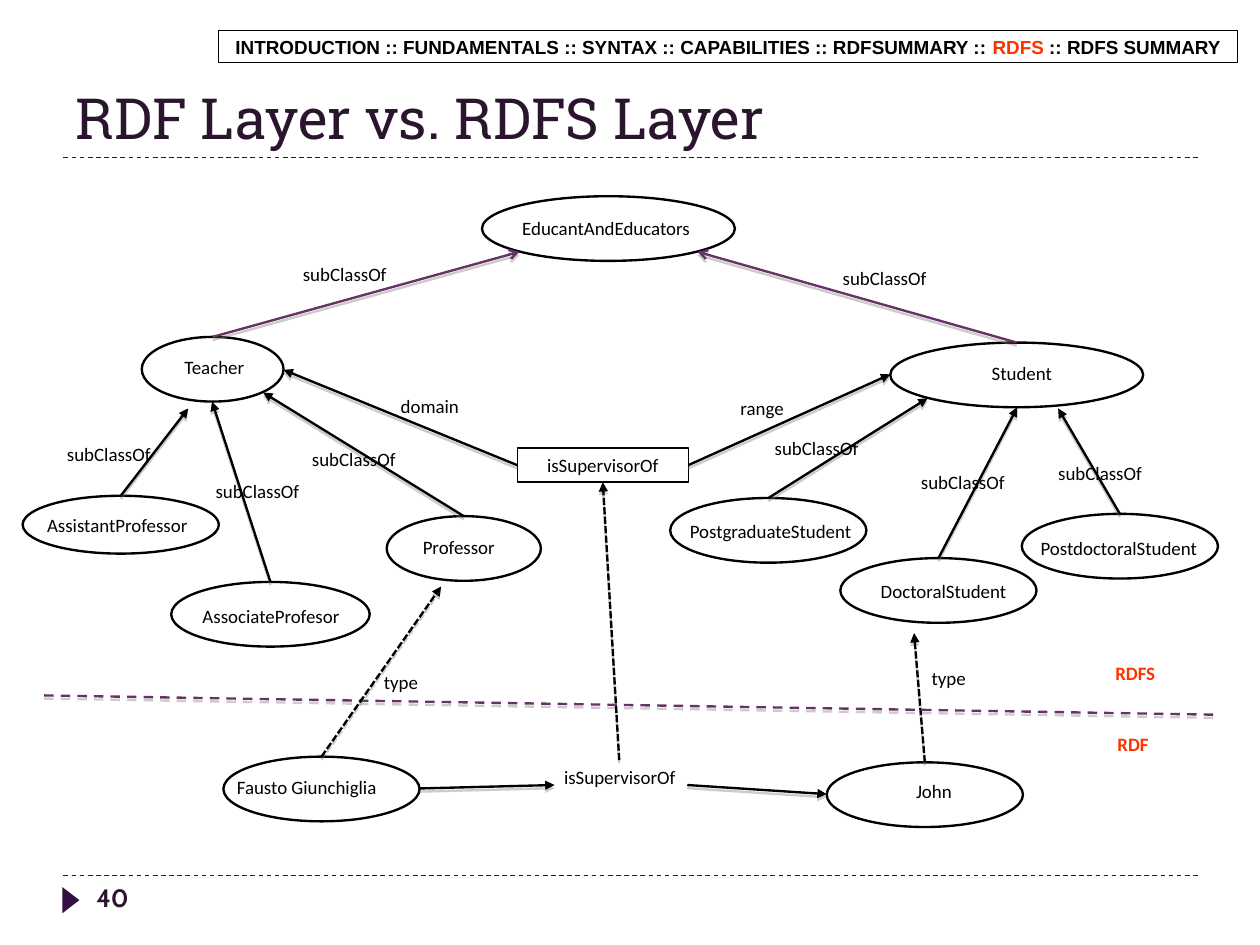
from dataclasses import dataclass
from typing import Any, NamedTuple, Optional, Union

from pptx import Presentation
from pptx import util as u
from pptx.dml.color import RGBColor
from pptx.enum import dml, shapes, text
from pptx.oxml import parse_xml
from pptx.oxml import ns

PX = 9144  # EMU in one px, 100 px to the inch
BLACK = RGBColor(0x00, 0x00, 0x00)
WHITE = RGBColor(0xFF, 0xFF, 0xFF)
RED = RGBColor(0xFF, 0x33, 0x00)
PURPLE = RGBColor(0x66, 0x33, 0x66)
DARK = RGBColor(0x33, 0x0F, 0x42)
TITLE = RGBColor(0x2B, 0x14, 0x2D)

DASH = dml.MSO_LINE.DASH
SHORT_DASH = dml.MSO_LINE.SQUARE_DOT
LEFT, CENTER = text.PP_ALIGN.LEFT, text.PP_ALIGN.CENTER
SHAPE = shapes.MSO_SHAPE
SHADOW = ('<a:outerShdw blurRad="0" dist="25400" dir="5400000" rotWithShape="0">'
          '<a:srgbClr val="808080"><a:alpha val="40000"/></a:srgbClr></a:outerShdw>')

BODY = {"size": u.Pt(12), "name": "Calibri", "bold": False}
STRONG = BODY | {"bold": True}
HEADER = STRONG | {"name": "Arial"}
GROW = {"auto_size": text.MSO_AUTO_SIZE.SHAPE_TO_FIT_TEXT, "word_wrap": True}
MASTER_INSETS = {"margin_left": 11 * PX, "margin_right": 11 * PX,
                 "margin_top": 6 * PX, "margin_bottom": 6 * PX}
HEADER_FRAME = {"word_wrap": False, "vertical_anchor": text.MSO_ANCHOR.MIDDLE,
                "margin_left": 8 * PX, "margin_right": 8 * PX,
                "margin_top": 4 * PX, "margin_bottom": 4 * PX}


class Box(NamedTuple):
    x: int
    y: int
    w: int
    h: int = 30


class Point(NamedTuple):
    x: int
    y: int


class Site(NamedTuple):
    """A connection site of a named node: 0 top, 1 left, 2 bottom, 3 right."""
    node: str
    index: int


class Run(NamedTuple):
    words: str
    color: RGBColor = BLACK


@dataclass(frozen=True)
class Node:
    name: str
    outline: Box
    label: Box
    align: Any = CENTER


@dataclass(frozen=True)
class Label:
    run: Run
    box: Box
    font: dict


@dataclass(frozen=True)
class Link:
    start: Union[Point, Site]
    end: Union[Point, Site]
    color: RGBColor = BLACK
    head: Optional[str] = "triangle"
    dash: Any = None
    width: float = 1.5
    shadow: bool = True


PROPERTY = "isSupervisorOf"
PROPERTY_BOX = Box(456, 395, 151)
NODES = [
    Node("EducantAndEducators", Box(425, 173, 223, 57), Box(438, 186, 193)),
    Node("Teacher", Box(125, 297, 125, 57), Box(144, 309, 90)),
    Node("Student", Box(785, 302, 223, 57), Box(815, 314, 172)),
    Node("AssistantProfessor", Box(20, 437, 173, 51), Box(20, 448, 167)),
    Node("AssociateProfesor", Box(151, 513, 175, 57), Box(157, 528, 164)),
    Node("PostgraduateStudent", Box(591, 439, 173, 57), Box(587, 453, 185)),
    Node("DoctoralStudent", Box(741, 492, 173, 57), Box(757, 506, 150)),
    Node("Professor", Box(341, 455, 136, 57), Box(357, 467, 95)),
    Node("PostdoctoralStudent", Box(901, 453, 173, 57), Box(897, 468, 179)),
    Node("Fausto Giunchiglia", Box(197, 667, 173, 57), Box(199, 679, 171), LEFT),
    Node("John", Box(729, 672, 173, 57), Box(752, 682, 143)),
]
SUBCLASS_AT = [(666, 380), (795, 410), (916, 402), (42, 385),
               (173, 418), (258, 390), (250, 227), (726, 230)]
LABELS = [Label(Run("subClassOf"), Box(x, y, 108), BODY) for x, y in SUBCLASS_AT] + [
    Label(Run("range"), Box(622, 345, 100), BODY),
    Label(Run("domain"), Box(329, 343, 100), BODY),
    Label(Run("type"), Box(316, 586, 75), BODY),
    Label(Run("type"), Box(799, 583, 75), BODY),
    Label(Run(PROPERTY), Box(471, 670, 151), BODY),
    Label(Run("RDFS", RED), Box(947, 578, 108), STRONG),
    Label(Run("RDF", RED), Box(945, 641, 108), STRONG),
]
RULES = [Link(Point(56, y), Point(1056, y), DARK, None, DASH, 0.75, False)
         for y in (772, 139)]
LINKS = [
    Link(Site("Teacher", 0), Point(458, 222), PURPLE, "arrow"),
    Link(Site("Student", 0), Point(615, 222), PURPLE, "arrow"),
    Link(Site("AssistantProfessor", 0), Point(166, 360)),
    Link(Site("AssociateProfesor", 0), Point(187, 354)),
    Link(Site("Professor", 0), Point(232, 346)),
    Link(Site("PostgraduateStudent", 0), Point(818, 351)),
    Link(Site("DoctoralStudent", 0), Point(897, 359)),
    Link(Site("PostdoctoralStudent", 0), Point(933, 360)),
    Link(Site(PROPERTY, 1), Point(250, 326)),
    Link(Site(PROPERTY, 3), Point(785, 330)),
    Link(Point(39, 613), Point(1072, 630), PURPLE, None, DASH),
    Link(Point(546, 670), Site(PROPERTY, 2), dash=SHORT_DASH),
    Link(Site("Fausto Giunchiglia", 0), Point(389, 517), dash=SHORT_DASH),
    Link(Site("John", 0), Point(806, 558), dash=SHORT_DASH),
    Link(Point(370, 695), Point(489, 692)),
    Link(Point(606, 692), Point(729, 700)),
]


def emu(lengths: tuple) -> list[int]:
    return [n * PX for n in lengths]


def apply(obj: Any, values: dict) -> None:
    for name, value in values.items():
        setattr(obj, name, value)


def write(sp: Any, runs: list[Run], font: dict, frame: dict, align: Any = CENTER) -> None:
    tf = sp.text_frame
    apply(tf, frame)
    p = tf.paragraphs[0]
    p.alignment = align
    for run in runs:
        r = p.add_run()
        r.text = run.words
        apply(r.font, font)
        r.font.color.rgb = run.color


def add_text(slide: Any, box: Box, run: Run, font: dict, frame: dict = GROW,
             align: Any = CENTER) -> None:
    write(slide.shapes.add_textbox(*emu(box)), [run], font, frame, align)


def add_outline(slide: Any, kind: Any, box: Box, width: float = 0.75,
                fill: Optional[RGBColor] = None) -> Any:
    sp = slide.shapes.add_shape(kind, *emu(box))
    sp.shadow.inherit = False
    sp.line.color.rgb, sp.line.width = BLACK, u.Pt(width)
    if fill is None:
        sp.fill.background()
    else:
        sp.fill.solid()
        sp.fill.fore_color.rgb = fill
    return sp


def add_link(slide: Any, link: Link, nodes: dict) -> None:
    ends = [(0, 0) if isinstance(e, Site) else emu(e) for e in (link.start, link.end)]
    c = slide.shapes.add_connector(shapes.MSO_CONNECTOR.STRAIGHT, *ends[0], *ends[1])
    for end, join in ((link.start, c.begin_connect), (link.end, c.end_connect)):
        if isinstance(end, Site):
            join(nodes[end.node], end.index)
    c.line.color.rgb = link.color
    apply(c.line, {"width": u.Pt(link.width), "dash_style": link.dash})
    pr = c.element.spPr
    if link.head:
        pr.find(ns.qn("a:ln")).append(
            parse_xml(f'<a:tailEnd {ns.nsdecls("a")} type="{link.head}"/>'))
    effect = SHADOW if link.shadow else ""
    pr.append(parse_xml(f'<a:effectLst {ns.nsdecls("a")}>{effect}</a:effectLst>'))


def add_master_parts(slide: Any) -> None:
    """Title, rules, page marker and page number."""
    for rule in RULES:
        add_link(slide, rule, {})
    marker = add_outline(slide, SHAPE.ISOSCELES_TRIANGLE, Box(51, 786, 23, 15), fill=DARK)
    marker.rotation = 90
    marker.line.fill.background()
    title = slide.shapes.title
    apply(title, dict(zip(("left", "top", "width", "height"), emu(Box(56, 19, 1000, 120)))))
    write(title, [Run("RDF Layer vs. RDFS Layer", TITLE)],
          {"size": u.Pt(36), "name": "Roboto Slab"},
          MASTER_INSETS | {"vertical_anchor": text.MSO_ANCHOR.BOTTOM,
                           "auto_size": text.MSO_AUTO_SIZE.NONE}, LEFT)
    add_text(slide, Box(74, 772, 241, 44), Run("40", TITLE),
             {"size": u.Pt(16), "name": "Cabin", "bold": True},
             MASTER_INSETS | {"word_wrap": True}, LEFT)


def main() -> None:
    prs = Presentation()
    prs.slide_width, prs.slide_height = emu((1111, 833))
    slide = prs.slides.add_slide(prs.slide_layouts[5])
    add_master_parts(slide)

    nodes = {}
    for node in NODES:
        nodes[node.name] = add_outline(slide, SHAPE.OVAL, node.outline, 1.5)
        add_text(slide, node.label, Run(node.name), BODY, align=node.align)
    nodes[PROPERTY] = add_outline(slide, SHAPE.RECTANGLE, PROPERTY_BOX)
    write(nodes[PROPERTY], [Run(PROPERTY)], BODY, GROW)
    for link in LINKS:
        add_link(slide, link, nodes)
    for label in LABELS:
        add_text(slide, label.box, label.run, label.font)

    header = add_outline(slide, SHAPE.RECTANGLE, Box(193, 27, 898, 28), fill=WHITE)
    write(header, [
        Run("INTRODUCTION :: FUNDAMENTALS :: SYNTAX :: CAPABILITIES :: RDFSUMMARY :: "),
        Run("RDFS", RED), Run(" :: RDFS SUMMARY")], HEADER, HEADER_FRAME)
    prs.save("out.pptx")


if __name__ == "__main__":
    main()
